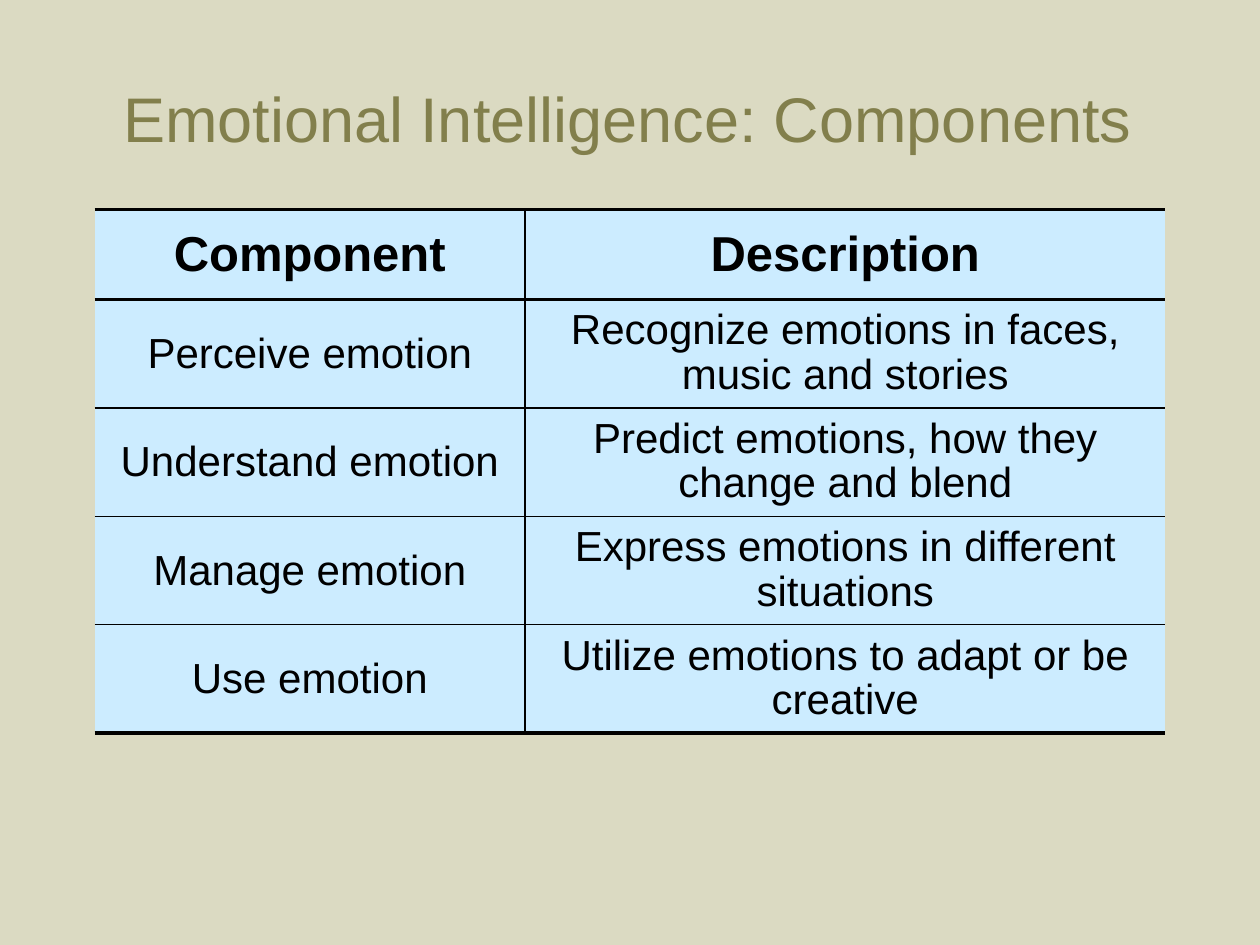
from dataclasses import dataclass

from lxml import etree
from pptx import Presentation
from pptx import util as u
from pptx.dml.color import RGBColor
from pptx.enum import text
from pptx.oxml import ns


@dataclass(frozen=True)
class Theme:
    font: str = "Arial"
    ground: str = "DBDAC2"
    heading: str = "827F4C"
    ink: str = "000000"
    cell: str = "CCECFF"
    title_size: int = 36
    header_size: int = 28
    body_size: int = 24
    heavy_rule: float = 2.25
    thin_rule: float = 1


THEME = Theme()
WIDTH, HEIGHT = u.Inches(10), u.Inches(7.5)
COLUMN_SHARES = (0.402, 0.598)
ROW_SHARES = (0.18, 0.205, 0.205, 0.205, 0.205)
COMPONENTS = (
    ("Component", "Description"),
    ("Perceive emotion", "Recognize emotions in faces, music and stories"),
    ("Understand emotion", "Predict emotions, how they change and blend"),
    ("Manage emotion", "Express emotions in different situations"),
    ("Use emotion", "Utilize emotions to adapt or be creative"),
)


def region(left, top, width, height):
    return (round(left * WIDTH), round(top * HEIGHT),
            round(width * WIDTH), round(height * HEIGHT))


def write(frame, words, size, color, bold=False, spacing=None):
    frame.word_wrap = True
    frame.vertical_anchor = text.MSO_ANCHOR.MIDDLE
    paragraph = frame.paragraphs[0]
    paragraph.alignment = text.PP_ALIGN.CENTER
    if spacing:
        paragraph.line_spacing = spacing
    run = paragraph.add_run()
    run.text = words
    run.font.name = THEME.font
    run.font.size = u.Pt(size)
    run.font.bold = bold
    run.font.color.rgb = RGBColor.from_string(color)


def rule_cell(cell, rules):
    properties = cell._tc.get_or_add_tcPr()
    for side in "LRTB":
        weight = rules.get(side, 0)
        line = etree.SubElement(properties, ns.qn(f"a:ln{side}"), w=str(u.Pt(weight)))
        if weight:
            fill = etree.SubElement(line, ns.qn("a:solidFill"))
            etree.SubElement(fill, ns.qn("a:srgbClr"), val=THEME.ink)
        else:
            etree.SubElement(line, ns.qn("a:noFill"))


def add_title(slide, box, words):
    title = slide.shapes.add_textbox(*box)
    write(title.text_frame, words, THEME.title_size, THEME.heading)


def add_components(slide, box, rows):
    table = slide.shapes.add_table(len(rows), len(rows[0]), *box).table
    table.first_row = table.horz_banding = False
    for column, share in zip(table.columns, COLUMN_SHARES):
        column.width = round(box[2] * share)
    for row, share in zip(table.rows, ROW_SHARES):
        row.height = round(box[3] * share)
    for r, entries in enumerate(rows):
        header = r == 0
        top = THEME.heavy_rule if r <= 1 else THEME.thin_rule
        bottom = THEME.heavy_rule if r in (0, len(rows) - 1) else THEME.thin_rule
        for c, words in enumerate(entries):
            cell = table.cell(r, c)
            inner = "R" if c == 0 else "L"
            rule_cell(cell, {"T": top, "B": bottom, inner: THEME.thin_rule})
            cell.fill.solid()
            cell.fill.fore_color.rgb = RGBColor.from_string(THEME.cell)
            cell.vertical_anchor = text.MSO_ANCHOR.MIDDLE
            size = THEME.header_size if header else THEME.body_size
            spacing = 0.95 if c == 1 and not header else None
            write_cell = cell.text_frame
            write(write_cell, words, size, THEME.ink, header, spacing)
            cell.vertical_anchor = text.MSO_ANCHOR.MIDDLE


def main():
    deck = Presentation()
    deck.slide_width, deck.slide_height = WIDTH, HEIGHT
    slide = deck.slides.add_slide(deck.slide_layouts[6])
    slide.background.fill.solid()
    slide.background.fill.fore_color.rgb = RGBColor.from_string(THEME.ground)
    add_title(slide, region(0.073, 0.041, 0.85, 0.167),
              "Emotional Intelligence: Components")
    add_components(slide, region(0.075, 0.222, 0.85, 0.528), COMPONENTS)
    deck.save("out.pptx")


if __name__ == "__main__":
    main()
